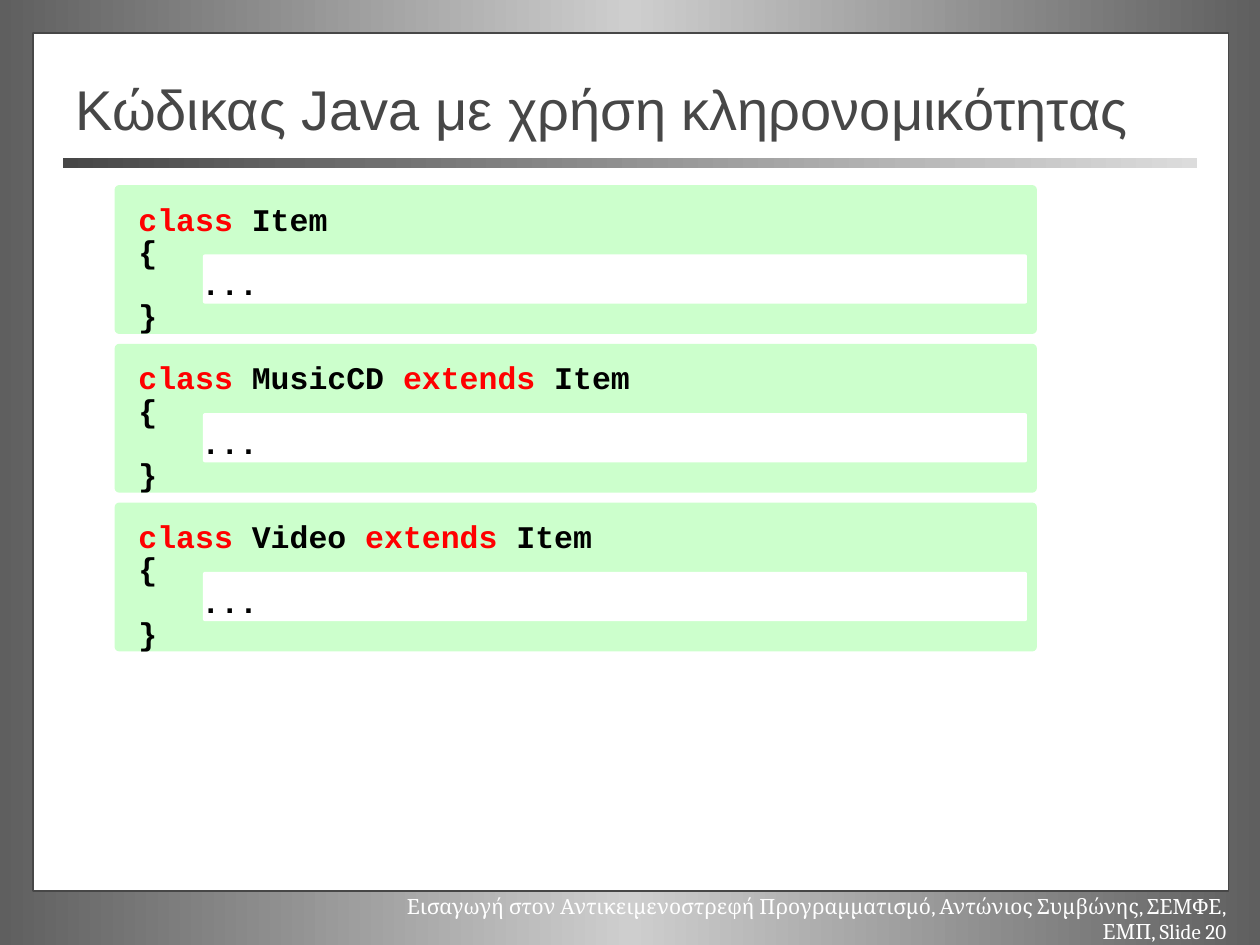
from copy import deepcopy

from pptx import Presentation
from pptx.dml.color import RGBColor
from pptx.enum.shapes import MSO_SHAPE
from pptx.enum.text import MSO_ANCHOR, PP_ALIGN
from pptx.oxml.ns import qn
from pptx.util import Pt

RECTANGLE = MSO_SHAPE.RECTANGLE
ROUNDED = MSO_SHAPE.ROUNDED_RECTANGLE
MIDDLE = MSO_ANCHOR.MIDDLE
TOP = MSO_ANCHOR.TOP
LEFT = PP_ALIGN.LEFT
RIGHT = PP_ALIGN.RIGHT

BLACK = RGBColor(0x00, 0x00, 0x00)
WHITE = RGBColor(0xFF, 0xFF, 0xFF)
RED = RGBColor(0xFF, 0x00, 0x00)
GREEN = RGBColor(0xCC, 0xFF, 0xCC)
CHARCOAL = RGBColor(0x47, 0x47, 0x47)
DARK_GREY = RGBColor(0x5F, 0x5F, 0x5F)
LIGHT_GREY = RGBColor(0xCE, 0xCE, 0xCE)
PALE_GREY = RGBColor(0xDC, 0xDC, 0xDC)

KEYWORDS = {"class", "extends"}
DECLARATIONS = ["class Item", "class MusicCD extends Item", "class Video extends Item"]
CARD_TOP = 105.8
CARD_STEP = 90.7
CODE_PITCH = 17.3


def set_gradient(fill, colors):
    fill.gradient()
    fill.gradient_angle = 0
    for stop, color in zip(fill.gradient_stops, colors):
        stop.color.rgb = color


def paint_background(slide):
    set_gradient(slide.background.fill, [DARK_GREY, LIGHT_GREY])
    stops = slide.element.find(".//" + qn("a:gsLst"))
    stops[1].set("pos", "50000")
    last_stop = deepcopy(stops[0])
    last_stop.set("pos", "100000")
    stops.append(last_stop)


def add_panel(slide, kind, box, color=None, radius=None):
    panel = slide.shapes.add_shape(kind, *map(Pt, box))
    panel.shadow.inherit = False
    panel.line.fill.background()
    if color is not None:
        panel.fill.solid()
        panel.fill.fore_color.rgb = color
    if radius is not None:
        panel.adjustments[0] = radius
    return panel


def add_frame(slide, box, anchor=TOP):
    frame = slide.shapes.add_textbox(*map(Pt, box)).text_frame
    frame.word_wrap = True
    frame.vertical_anchor = anchor
    return frame


def add_label(slide, box, text, font_name, size, color, align=LEFT, anchor=TOP):
    paragraph = add_frame(slide, box, anchor).paragraphs[0]
    paragraph.text = text
    paragraph.alignment = align
    paragraph.font.name = font_name
    paragraph.font.size = Pt(size)
    paragraph.font.color.rgb = color


def add_code_line(paragraph, text):
    paragraph.line_spacing = 0.85
    paragraph.font.name = "Courier New"
    paragraph.font.size = Pt(18)
    paragraph.font.bold = True
    for index, word in enumerate(text.split(" ")):
        run = paragraph.add_run()
        run.text = " " + word if index else word
        run.font.color.rgb = RED if word in KEYWORDS else BLACK


def add_code(slide, box):
    frame = add_frame(slide, box)
    for index, declaration in enumerate(DECLARATIONS):
        for line in (declaration, "{", "\t...", "}"):
            first = index == 0 and line == declaration
            paragraph = frame.paragraphs[0] if first else frame.add_paragraph()
            add_code_line(paragraph, line)
            if index and line == declaration:
                paragraph.space_before = Pt(CODE_PITCH)


def main():
    presentation = Presentation()
    presentation.slide_width = Pt(720)
    presentation.slide_height = Pt(540)
    slide = presentation.slides.add_slide(presentation.slide_layouts[6])
    paint_background(slide)

    page = add_panel(slide, RECTANGLE, (18.7, 18.7, 683.3, 490.6), WHITE)
    page.line.color.rgb = CHARCOAL
    page.line.width = Pt(1)
    add_label(slide, (198, 506.9, 509.8, 21.6),
              "Εισαγωγή στον Αντικειμενοστρεφή Προγραμματισμό, "
              "Αντώνιος Συμβώνης, ΣΕΜΦΕ, ΕΜΠ, Slide 20",
              "Cambria", 12, WHITE, RIGHT)
    title_rule = add_panel(slide, RECTANGLE, (36, 90, 648, 5.8))
    set_gradient(title_rule.fill, [CHARCOAL, PALE_GREY])

    for index in range(len(DECLARATIONS)):
        top = CARD_TOP + index * CARD_STEP
        add_panel(slide, ROUNDED, (65.5, top, 527, 85), GREEN, 0.03)
        add_panel(slide, ROUNDED, (116, top + 39.6, 470.9, 28.1), WHITE, 0.04)

    add_label(slide, (36, 39.6, 666, 44.6), "Κώδικας Java με χρήση κληρονομικότητας",
              "Arial", 32, CHARCOAL, anchor=MIDDLE)
    add_code(slide, (72, 113.8, 522, 252.7))
    presentation.save("out.pptx")


if __name__ == "__main__":
    main()
